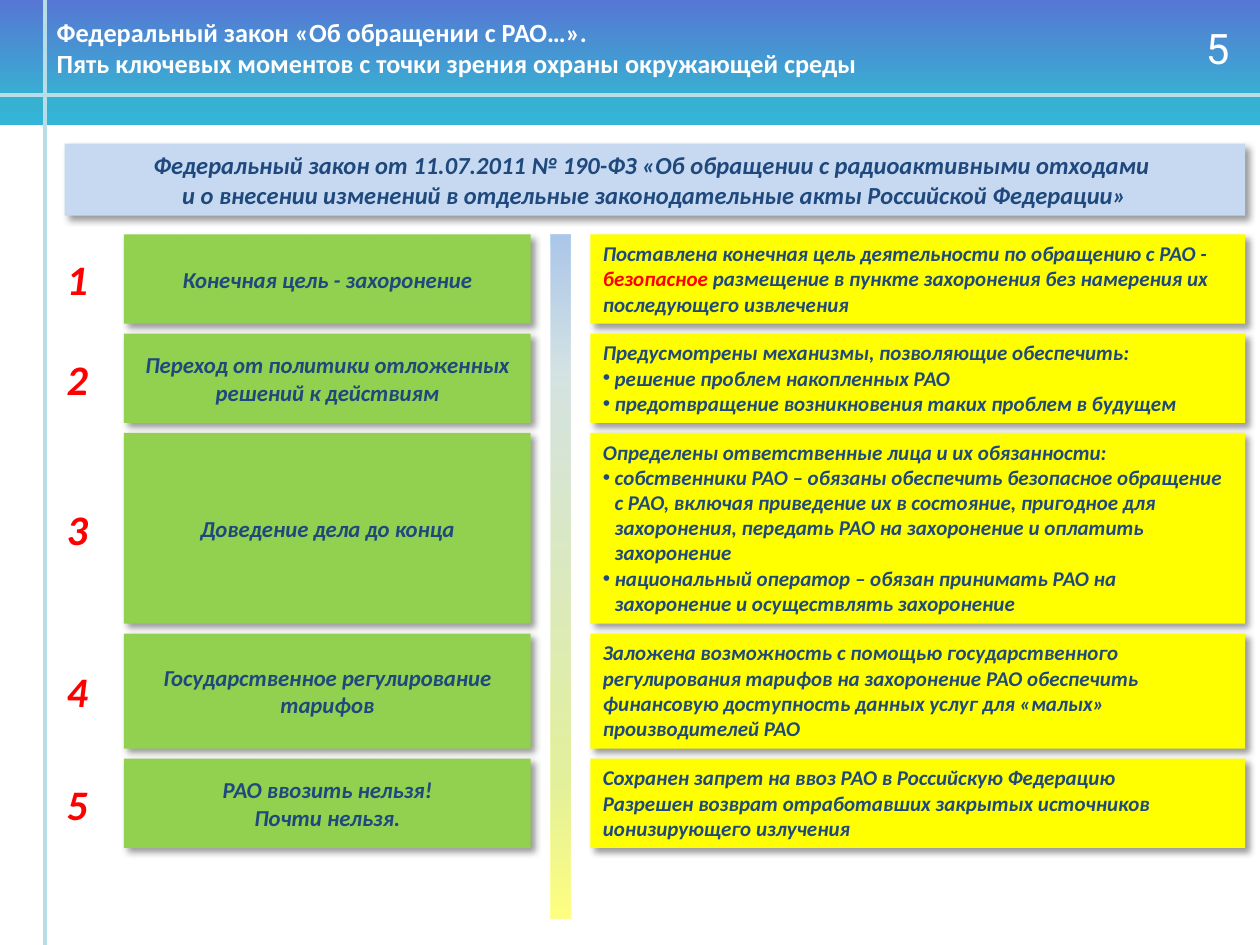
from dataclasses import dataclass

from lxml import etree
from pptx import Presentation
from pptx.dml.color import RGBColor
from pptx.enum.shapes import MSO_CONNECTOR, MSO_SHAPE
from pptx.enum.text import MSO_ANCHOR, PP_ALIGN
from pptx.oxml.ns import qn
from pptx.util import Pt

RECT = MSO_SHAPE.RECTANGLE
STRAIGHT = MSO_CONNECTOR.STRAIGHT
LEFT, CENTER = PP_ALIGN.LEFT, PP_ALIGN.CENTER
TOP, MIDDLE = MSO_ANCHOR.TOP, MSO_ANCHOR.MIDDLE

COLORS = {
    "white": "FFFFFF",
    "black": "000000",
    "navy": "1F497D",
    "red": "FF0000",
    "green": "92D050",
    "yellow": "FFFF00",
    "pale": "C6D9F1",
    "rule": "B7DEE8",
    "bar_blue": "558ED5",
    "bar_teal": "AAC7C8",
    "bar_lime": "C8E336",
    "head_top": "5677D4",
    "head_mid": "37B1D2",
    "head_end": "34B4D6",
}
SLIDE_W, SLIDE_H = 720, 540
ROWS_TOP, ROW_GAP = 134, 5.7


@dataclass
class Box:
    left: float
    top: float
    width: float
    height: float


@dataclass
class Style:
    size: float
    color: str = "navy"
    font: str = "Calibri"
    bold: bool = True
    italic: bool = True
    align: PP_ALIGN = LEFT
    anchor: MSO_ANCHOR = MIDDLE


@dataclass
class Line:
    text: str
    bullet: bool = False
    emphasis: str = ""


@dataclass
class KeyPoint:
    height: float
    title: list[Line]
    details: list[Line]


TITLE_STYLE = Style(15, "white", italic=False)
PAGE_STYLE = Style(24, "white", "Roboto", bold=False, italic=False, align=CENTER)
LAW_STYLE = Style(14, align=CENTER)
NUMBER_STYLE = Style(24, "red")
POINT_STYLE = Style(13, align=CENTER)
DETAIL_STYLE = Style(12, anchor=TOP)

KEY_POINTS = [
    KeyPoint(51, [Line("Конечная цель - захоронение")], [
        Line("Поставлена конечная цель деятельности по обращению с РАО - безопасное "
             "размещение в пункте захоронения без намерения их последующего извлечения",
             emphasis="безопасное"),
    ]),
    KeyPoint(51, [Line("Переход от политики отложенных решений к действиям")], [
        Line("Предусмотрены механизмы, позволяющие обеспечить:"),
        Line("решение проблем накопленных РАО", True),
        Line("предотвращение возникновения таких проблем в будущем", True),
    ]),
    KeyPoint(109, [Line("Доведение дела до конца")], [
        Line("Определены ответственные лица и их обязанности:"),
        Line("собственники РАО – обязаны обеспечить безопасное обращение с РАО, "
             "включая приведение их в состояние, пригодное для захоронения, "
             "передать РАО на захоронение и оплатить захоронение", True),
        Line("национальный оператор – обязан принимать РАО на захоронение "
             "и осуществлять захоронение", True),
    ]),
    KeyPoint(65.7, [Line("Государственное регулирование тарифов")], [
        Line("Заложена возможность с помощью государственного регулирования тарифов "
             "на захоронение РАО обеспечить финансовую доступность данных услуг "
             "для «малых» производителей РАО"),
    ]),
    KeyPoint(51, [Line("РАО ввозить нельзя!"), Line("Почти нельзя.")], [
        Line("Сохранен запрет на ввоз РАО в Российскую Федерацию"),
        Line("Разрешен возврат отработавших закрытых источников ионизирующего излучения"),
    ]),
]


def rgb(name: str) -> RGBColor:
    return RGBColor.from_string(COLORS[name])


def add_color(parent, name: str, alpha: int):
    clr = etree.SubElement(parent, qn("a:srgbClr"), val=COLORS[name])
    if alpha < 100:
        etree.SubElement(clr, qn("a:alpha"), val=str(alpha * 1000))


def add_rect(slide, box: Box):
    sp = slide.shapes.add_shape(
        RECT, Pt(box.left), Pt(box.top), Pt(box.width), Pt(box.height))
    sp.shadow.inherit = False
    sp.line.fill.background()
    return sp


def add_gradient(slide, box: Box, stops: list[tuple[int, str]], alpha: int = 100):
    sp = add_rect(slide, box)
    sp.fill.gradient()
    sp.fill.gradient_angle = 270
    stop_list = sp._element.spPr.find(".//" + qn("a:gsLst"))
    for old in list(stop_list):
        stop_list.remove(old)
    for pos, color in stops:
        stop = etree.SubElement(stop_list, qn("a:gs"), pos=str(pos * 1000))
        add_color(stop, color, alpha)


def add_rule(slide, x1: float, y1: float, x2: float, y2: float):
    line = slide.shapes.add_connector(STRAIGHT, Pt(x1), Pt(y1), Pt(x2), Pt(y2))
    line.line.color.rgb = rgb("rule")
    line.line.width = Pt(2.25)
    etree.SubElement(line._element.spPr, qn("a:effectLst"))


def write(sp, lines: list[Line], style: Style):
    tf = sp.text_frame
    tf.word_wrap = True
    tf.vertical_anchor = style.anchor
    for i, line in enumerate(lines):
        p = tf.add_paragraph() if i else tf.paragraphs[0]
        p.alignment = style.align
        if line.emphasis:
            for part in line.text.partition(line.emphasis):
                p.add_run().text = part
        else:
            p.text = line.text
        for r in p.runs:
            r.font.name = style.font
            r.font.size = Pt(style.size)
            r.font.bold = style.bold
            r.font.italic = style.italic
            r.font.color.rgb = rgb("red" if r.text == line.emphasis else style.color)
        if line.bullet:
            pPr = p._p.get_or_add_pPr()
            pPr.set("marL", str(Pt(6.75)))
            pPr.set("indent", str(-Pt(6.75)))
            etree.SubElement(pPr, qn("a:buFont"), typeface="Arial")
            etree.SubElement(pPr, qn("a:buChar"), char="•")


def add_label(slide, box: Box, text: str, style: Style):
    tb = slide.shapes.add_textbox(
        Pt(box.left), Pt(box.top), Pt(box.width), Pt(box.height))
    write(tb, [Line(text)], style)


def add_card(slide, box: Box, fill: str, lines: list[Line], style: Style):
    sp = add_rect(slide, box)
    sp.fill.solid()
    sp.fill.fore_color.rgb = rgb(fill)
    effects = sp._element.spPr.find(qn("a:effectLst"))
    shadow = etree.SubElement(
        effects, qn("a:outerShdw"), blurRad=str(Pt(4)), dist=str(Pt(3)),
        dir="2700000", algn="tl", rotWithShape="0")
    add_color(shadow, "black", 40)
    write(sp, lines, style)


def main():
    prs = Presentation()
    prs.slide_width, prs.slide_height = Pt(SLIDE_W), Pt(SLIDE_H)
    s = prs.slides.add_slide(prs.slide_layouts[6])

    add_gradient(s, Box(314.6, 134, 11.6, 391), [
        (0, "bar_blue"), (20, "bar_teal"), (80, "bar_lime"), (100, "yellow")], 50)
    add_gradient(s, Box(0, 0, SLIDE_W, 71.4), [
        (0, "head_top"), (80, "head_mid"), (100, "head_end")])
    add_label(s, Box(680.4, 0, 31, 54.5), "5", PAGE_STYLE)
    add_rule(s, 25.5, 0, 25.5, SLIDE_H)
    add_rule(s, 0, 54.5, SLIDE_W, 54.5)
    add_label(s, Box(25.3, 0, 646.5, 54.5),
              "Федеральный закон «Об обращении с РАО…». \v"
              "Пять ключевых моментов с точки зрения охраны окружающей среды", TITLE_STYLE)
    add_card(s, Box(36.9, 82, 674.6, 41.2), "pale", [Line(
        "Федеральный закон от 11.07.2011 № 190-ФЗ «Об обращении с радиоактивными отходами \v"
        "и о внесении изменений в отдельные законодательные акты Российской Федерации»",
    )], LAW_STYLE)

    top = ROWS_TOP
    for number, point in enumerate(KEY_POINTS, 1):
        add_card(s, Box(70.8, top, 232.5, point.height), "green", point.title, POINT_STYLE)
        add_card(s, Box(337.4, top, 374.1, point.height), "yellow",
                 point.details, DETAIL_STYLE)
        add_label(s, Box(31, top, 22.5, point.height), str(number), NUMBER_STYLE)
        top += point.height + ROW_GAP

    prs.save("out.pptx")


if __name__ == "__main__":
    main()
